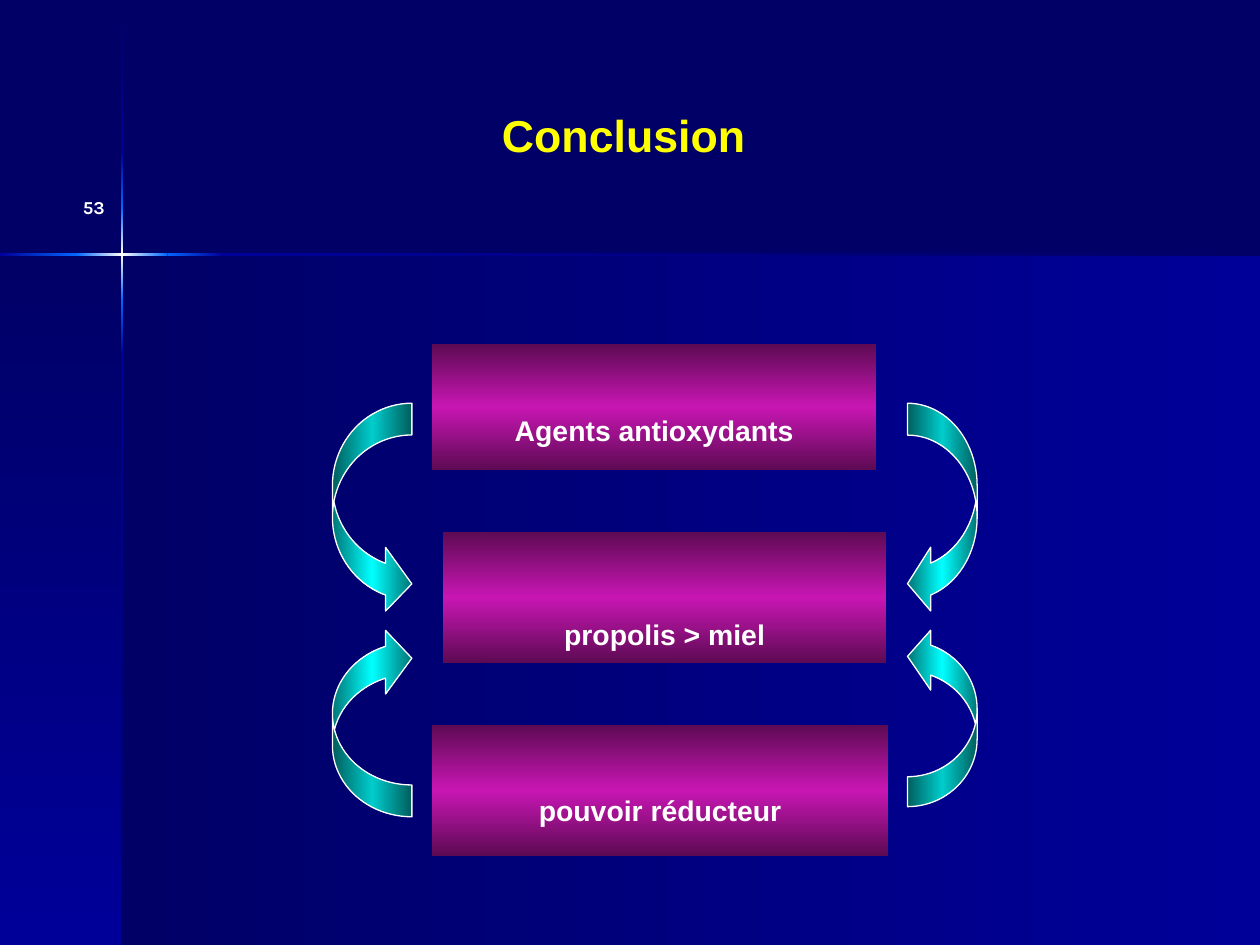
from lxml.etree import SubElement
from pptx import Presentation
from pptx.dml.color import RGBColor
from pptx.enum.shapes import MSO_SHAPE
from pptx.enum.text import MSO_ANCHOR, PP_ALIGN
from pptx.oxml.ns import qn
from pptx.util import Pt

NAVY, BLUE, BRIGHT, WHITE = "000066", "000099", "0066FF", "FFFFFF"
YELLOW = "FFFF00"
PLUM = ("5D0A53", "C816B3", "5D0A53")
TEAL = ("007676", "00FFFF", "007676")


def rgb(hex_value):
    return RGBColor.from_string(hex_value)


class Slide:
    font = "Arial"

    def __init__(self, prs, background):
        self.s = prs.slides.add_slide(prs.slide_layouts[6])
        fill = self.s.background.fill
        fill.solid()
        fill.fore_color.rgb = rgb(background)

    def gradient(self, sp, colors, angle):
        """Spread the colours evenly along a linear gradient."""
        sp.fill.gradient()
        grad = sp._element.spPr.find(qn("a:gradFill"))
        stops = grad.find(qn("a:gsLst"))
        for stop in list(stops):
            stops.remove(stop)
        for i, color in enumerate(colors):
            stop = SubElement(stops, qn("a:gs"), pos=str(i * 100000 // (len(colors) - 1)))
            SubElement(stop, qn("a:srgbClr"), val=color)
        grad.find(qn("a:lin")).set("ang", str(angle * 60000))

    def shape(self, kind, box, colors, angle=0):
        sp = self.s.shapes.add_shape(kind, *map(Pt, box))
        sp.shadow.inherit = False
        sp.line.fill.background()
        self.gradient(sp, colors, angle)
        return sp

    def rect(self, box, colors, angle=0):
        return self.shape(MSO_SHAPE.RECTANGLE, box, colors, angle)

    def arrow(self, box, adjustments, flips=()):
        sp = self.shape(MSO_SHAPE.CURVED_LEFT_ARROW, box, TEAL)
        sp.line.color.rgb = rgb(WHITE)
        sp.line.width = Pt(0.75)
        for i, value in enumerate(adjustments):
            sp.adjustments[i] = value
        for flip in flips:
            sp._element.spPr.find(qn("a:xfrm")).set(flip, "1")

    def add_text(self, sp, text, size, color=WHITE, font=font, align=PP_ALIGN.CENTER, top=3.6):
        """Raised bold text, starting at a given distance from the top."""
        tf = sp.text_frame
        tf.word_wrap = True
        tf.vertical_anchor = MSO_ANCHOR.TOP
        tf.margin_top, tf.margin_bottom = Pt(top), 0
        p = tf.paragraphs[0]
        p.alignment = align
        r = p.add_run()
        r.text = text
        r.font.name, r.font.size, r.font.bold = font, Pt(size), True
        r.font.color.rgb = rgb(color)
        r._r.get_or_add_rPr().set("baseline", "30000")

    def label(self, box, text, size, **style):
        self.add_text(self.s.shapes.add_textbox(*map(Pt, box)), text, size, **style)


def main():
    prs = Presentation()
    prs.slide_width, prs.slide_height = Pt(720), Pt(540)
    slide = Slide(prs, NAVY)

    # Background panels, meeting at the cross
    cross_x, cross_y, bar = 69.8, 145.4, 1.44
    slide.rect((cross_x, cross_y, 720 - cross_x, 540 - cross_y), (NAVY, BLUE))
    slide.rect((0, cross_y, cross_x, 540 - cross_y), (NAVY, BLUE), 90)

    # Glowing cross: each bar is a chain of gradient segments
    glow = [(NAVY, BLUE), (BLUE, BRIGHT), (BRIGHT, WHITE, BRIGHT), (BRIGHT, BLUE), (BLUE, NAVY)]
    ys = [0.7, 87.1, 118.8, 171.4, 203, 540]
    xs = [0, 43.5, 95.8, 127.4, 720]
    for y1, y2, colors in zip(ys, ys[1:], glow):
        slide.rect((cross_x - bar / 2, y1, bar, y2 - y1), colors, 90)
    for x1, x2, colors in zip(xs, xs[1:], glow[1:]):
        slide.rect((x1, cross_y - bar / 2, x2 - x1, bar), colors)

    # Statement boxes
    for box, text, top in [
        ((246.9, 196.6, 253.8, 72), "Agents antioxydants", 35.8),
        ((253.2, 304, 253.2, 74.9), "propolis > miel", 45),
        ((246.9, 414.2, 260.6, 74.9), "pouvoir réducteur", 35.8),
    ]:
        slide.add_text(slide.rect(box, PLUM, 90), text, 28, top=top)

    # Curved arrows towards the middle box
    left, right = (190, 45.4), (518.6, 39.8)
    for (x, w), y, h, adjustments, flips in [
        (right, 230.4, 121.4, (0.458, 0.916, 0.333), ()),
        (left, 230.4, 121.4, (0.4, 0.8, 0.331), ("flipH",)),
        (right, 358, 103, (0.43, 0.859, 0.333), ("flipV",)),
        (left, 358, 108.8, (0.4, 0.8, 0.331), ("flipH", "flipV")),
    ]:
        slide.arrow((x, y, w, h), adjustments, flips)

    # Title and slide number
    slide.label((0, 52.6, 720, 42.5), "Conclusion ", 44, color=YELLOW)
    slide.label((0, 106.6, 67, 36), "53", 18, font="Karla", align=PP_ALIGN.RIGHT)

    prs.save("out.pptx")


if __name__ == "__main__":
    main()
